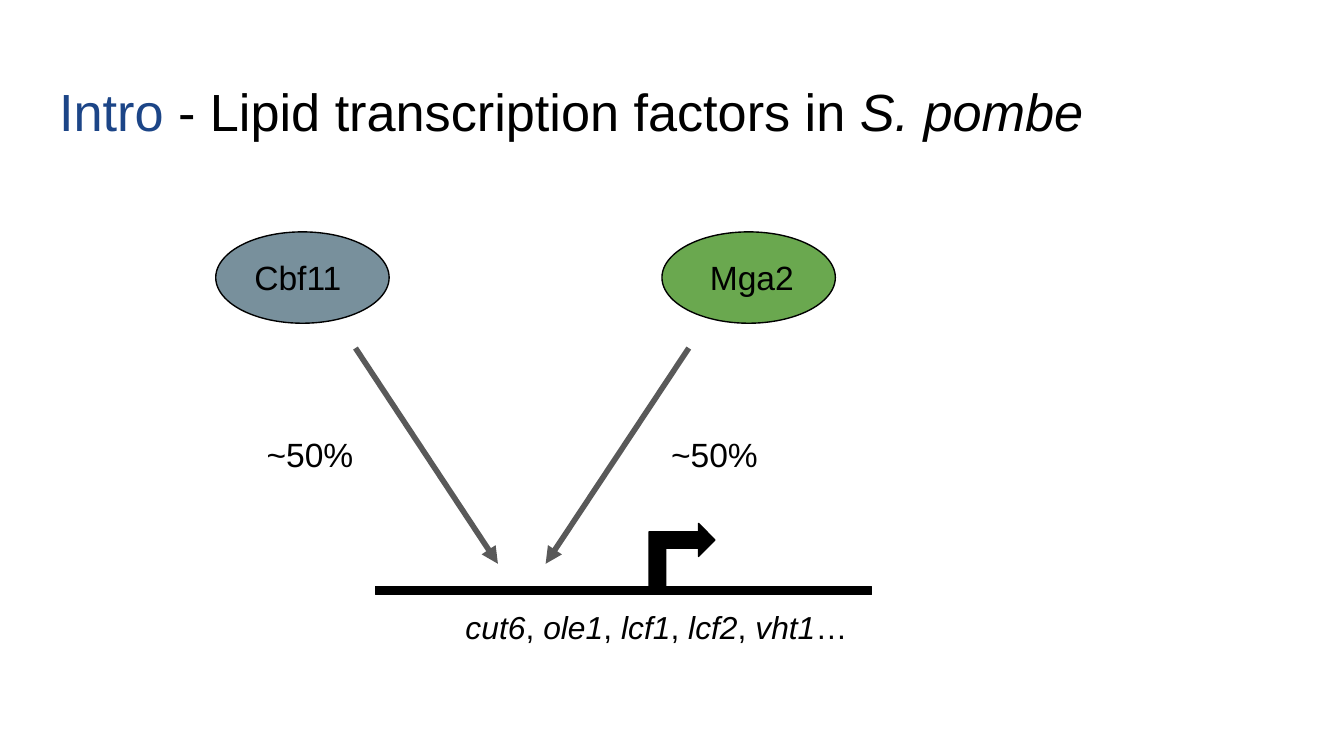
import pptx
import pptx.util
import pptx.dml.color
import pptx.enum.shapes
import pptx.enum.text
import pptx.oxml
import pptx.oxml.ns

EMU_PER_PX = 4572
THEME = {
    "font": "Arial",
    "ink": "000000", "accent": "1C4587", "arrow": "595959",
    "cbf11": "78909C", "mga2": "6AA84F",
    "title_size": 28, "label_size": 18, "gene_size": 17,
    "outline": 0.75, "arrow_width": 3,
}
PRESET = pptx.enum.shapes.MSO_SHAPE
ANCHOR = pptx.enum.text.MSO_ANCHOR


def px(*lengths):
    return [pptx.util.Emu(length * EMU_PER_PX) for length in lengths]


def write(frame, runs, size, anchor=ANCHOR.TOP):
    inset = px(20)[0]
    frame_format = {
        "word_wrap": True, "auto_size": pptx.enum.text.MSO_AUTO_SIZE.NONE,
        "vertical_anchor": anchor, "margin_left": inset, "margin_right": inset,
        "margin_top": inset, "margin_bottom": inset,
    }
    for name, value in frame_format.items():
        setattr(frame, name, value)
    paragraph = frame.paragraphs[0]
    paragraph.alignment = pptx.enum.text.PP_ALIGN.LEFT
    for text, color, italic in runs:
        run = paragraph.add_run()
        run.text = text
        run_format = {"name": THEME["font"], "size": pptx.util.Pt(size), "italic": italic}
        for name, value in run_format.items():
            setattr(run.font, name, value)
        run.font.color.rgb = pptx.dml.color.RGBColor.from_string(THEME[color])


deck = pptx.Presentation()
deck.slide_width, deck.slide_height = px(2000, 1125)
slide = deck.slides.add_slide(deck.slide_layouts[5])

heading = slide.shapes.title
for name, value in zip(("left", "top", "width", "height"), px(68, 98, 1864, 126)):
    setattr(heading, name, value)
write(heading.text_frame, [
    ("Intro", "accent", False),
    (" - Lipid transcription factors in ", "ink", False),
    ("S. pombe", "ink", True),
], THEME["title_size"])

diagram = {}
for part, preset, box, fill in [
    ("cbf11", PRESET.OVAL, (321, 345, 258, 136), "cbf11"),
    ("mga2", PRESET.OVAL, (985, 345, 258, 136), "mga2"),
    ("dna", PRESET.RECTANGLE, (559, 873, 738, 12), "ink"),
    ("promoter", PRESET.BENT_UP_ARROW, (963, 782, 104, 98), "ink"),
]:
    shape = slide.shapes.add_shape(preset, *px(*box))
    shape.shadow.inherit = False
    shape.fill.solid()
    shape.fill.fore_color.rgb = pptx.dml.color.RGBColor.from_string(THEME[fill])
    shape.line.color.rgb = pptx.dml.color.RGBColor.from_string(THEME["ink"])
    shape.line.width = pptx.util.Pt(THEME["outline"])
    diagram[part] = shape

diagram["promoter"].rotation = 90
diagram["promoter"]._element.spPr.xfrm.set("flipH", "1")

for factor, label in [("cbf11", "Cbf11"), ("mga2", " Mga2")]:
    write(diagram[factor].text_frame, [(label, "ink", False)], THEME["label_size"], ANCHOR.MIDDLE)

for start_x, end_x in [(529, 741), (1025, 812)]:
    regulation = slide.shapes.add_connector(
        pptx.enum.shapes.MSO_CONNECTOR.STRAIGHT, *px(start_x, 518, end_x, 839))
    regulation.line.color.rgb = pptx.dml.color.RGBColor.from_string(THEME["arrow"])
    regulation.line.width = pptx.util.Pt(THEME["arrow_width"])
    arrowhead = pptx.oxml.ns.qn("a:tailEnd")
    regulation.line._get_or_add_ln().append(
        regulation._element.makeelement(arrowhead, {"type": "triangle"}))
    regulation._element.spPr.append(
        regulation._element.makeelement(pptx.oxml.ns.qn("a:effectLst"), {}))

for share_x in (377, 979):
    share = slide.shapes.add_textbox(*px(share_x, 626, 212, 100))
    write(share.text_frame, [("~50%", "ink", False)], THEME["label_size"])

gene_runs = []
for gene in ("cut6", "ole1", "lcf1", "lcf2", "vht1"):
    separator = "…" if gene == "vht1" else ", "
    gene_runs += [(gene, "ink", True), (separator, "ink", False)]
genes = slide.shapes.add_textbox(*px(673, 885, 622, 98))
write(genes.text_frame, gene_runs, THEME["gene_size"])

deck.save("out.pptx")
